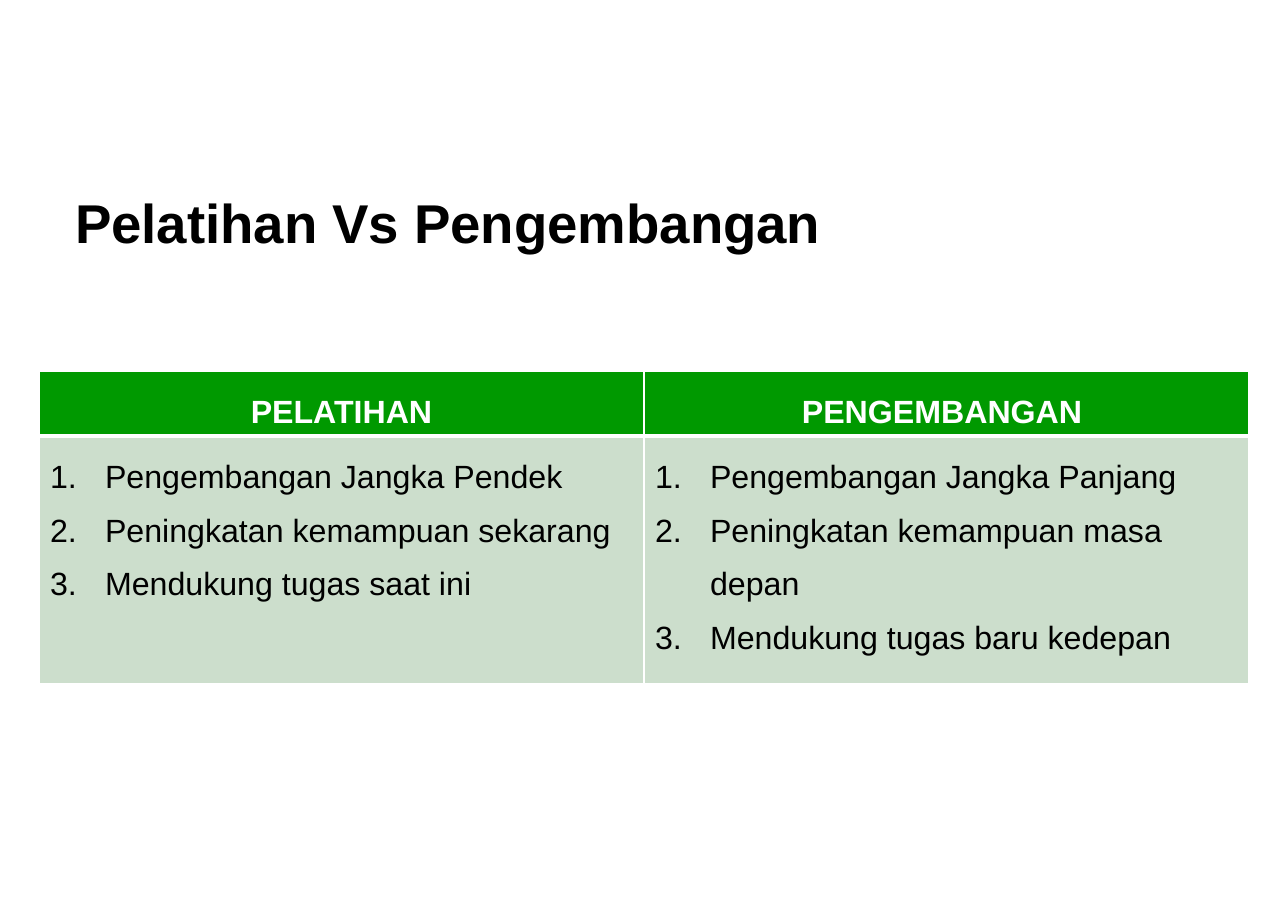
"""Builds a slide that compares training with development in a table."""
import pptx
import pptx.dml.color
import pptx.enum.text
import pptx.oxml
import pptx.oxml.ns
import pptx.util

PX = 8298
FONT = "Arial"
WHITE, BLACK, GREEN, PALE_GREEN = "FFFFFF", "000000", "009900", "CCDECC"
ALIGN = pptx.enum.text.PP_ALIGN
COMPARISON = {
    "PELATIHAN": [
        "Pengembangan Jangka Pendek",
        "Peningkatan kemampuan sekarang",
        "Mendukung tugas saat ini",
    ],
    "PENGEMBANGAN ": [
        "Pengembangan Jangka Panjang",
        "Peningkatan kemampuan masa depan",
        "Mendukung tugas baru kedepan",
    ],
}


def px(length):
    return pptx.util.Emu(length * PX)


def color(value):
    return pptx.dml.color.RGBColor.from_string(value)


def style(paragraph, size, ink, bold, align):
    paragraph.alignment = align
    font = paragraph.font
    font.name, font.size, font.bold = FONT, pptx.util.Pt(size), bold
    font.color.rgb = color(ink)


def number(paragraph):
    properties = paragraph._p.get_or_add_pPr()
    indent = px(55)
    properties.set("marL", str(indent))
    properties.set("indent", str(-indent))
    numbering = pptx.oxml.parse_xml(
        f'<a:buAutoNum {pptx.oxml.ns.nsdecls("a")} type="arabicPeriod"/>')
    properties.append(numbering)


def border(cell, widths):
    properties = cell._tc.get_or_add_tcPr()
    for side in "LRTB":
        width = pptx.util.Pt(widths.get(side, 1))
        properties.append(pptx.oxml.parse_xml(
            f'<a:ln{side} {pptx.oxml.ns.nsdecls("a")} w="{width}"><a:solidFill>'
            f'<a:srgbClr val="{WHITE}"/></a:solidFill></a:ln{side}>'))


def fill_cell(cell, lines, background, ink, widths, is_header):
    border(cell, widths)
    cell.fill.solid()
    cell.fill.fore_color.rgb = color(background)
    cell.text = "\n".join(lines)
    for paragraph in cell.text_frame.paragraphs:
        paragraph.line_spacing = 1.5
        if not is_header:
            number(paragraph)
        style(paragraph, 21, ink, is_header, ALIGN.CENTER if is_header else ALIGN.LEFT)


def add_heading(slide, left, top, width, height):
    heading = slide.shapes.title
    heading.left, heading.top = px(left), px(top)
    heading.width, heading.height = px(width), px(height)
    frame = heading.text_frame
    frame.text = "Pelatihan Vs Pengembangan"
    frame.auto_size = pptx.enum.text.MSO_AUTO_SIZE.NONE
    frame.vertical_anchor = pptx.enum.text.MSO_ANCHOR.MIDDLE
    style(frame.paragraphs[0], 35.7, BLACK, True, ALIGN.LEFT)


def add_comparison(slide, left, top, width, height):
    header_height = 51
    comparison = slide.shapes.add_table(
        2, len(COMPARISON), px(left), px(top), px(width), px(height)).table
    comparison.rows[0].height = px(header_height)
    comparison.rows[1].height = px(height - header_height)
    for column, (header, points) in enumerate(COMPARISON.items()):
        fill_cell(comparison.cell(0, column), [header], GREEN, WHITE, {"B": 3}, True)
        fill_cell(comparison.cell(1, column), points, PALE_GREEN, BLACK, {"T": 3}, False)


def main():
    deck = pptx.Presentation()
    deck.slide_width, deck.slide_height = px(1288), px(911)
    slide = deck.slides.add_slide(deck.slide_layouts[5])
    add_heading(slide, 64, 186, 1160, 72)
    add_comparison(slide, 39, 371, 1210, 299)
    deck.save("out.pptx")


if __name__ == "__main__":
    main()
